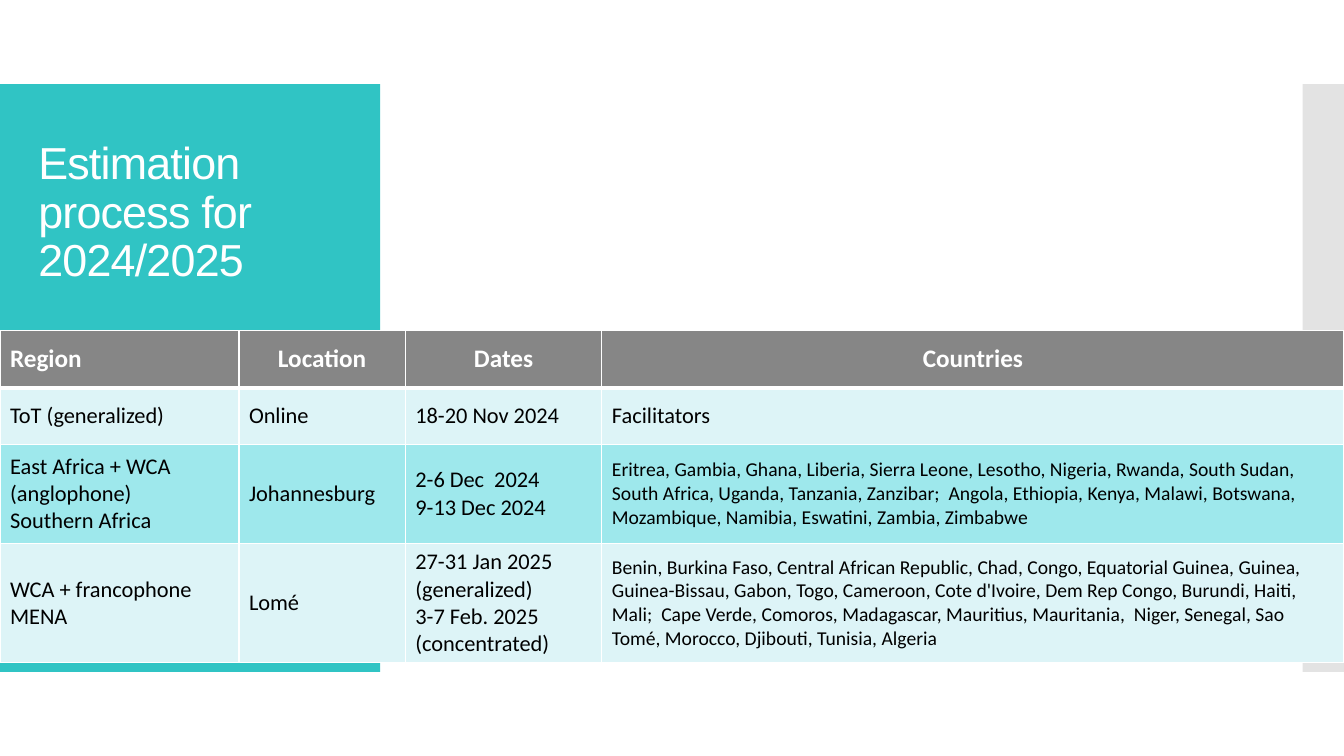
from lxml import etree
from pptx import Presentation
from pptx.dml.color import RGBColor
from pptx.enum.shapes import MSO_SHAPE
from pptx.enum.text import MSO_ANCHOR, MSO_AUTO_SIZE, PP_ALIGN
from pptx.oxml.ns import qn
from pptx.util import Inches, Pt

RECTANGLE = MSO_SHAPE.RECTANGLE
MIDDLE = MSO_ANCHOR.MIDDLE
NO_AUTOFIT = MSO_AUTO_SIZE.NONE
LEFT, CENTER = PP_ALIGN.LEFT, PP_ALIGN.CENTER

WIDTH, HEIGHT = 13.33, 7.5
PANEL_TOP, PANEL_HEIGHT = HEIGHT / 9, HEIGHT * 7 / 9
TITLE_PANEL = (0, PANEL_TOP, 3.77, PANEL_HEIGHT)
EDGE_PANEL = (12.92, PANEL_TOP, WIDTH - 12.92, PANEL_HEIGHT)
TITLE_BOX = (0.28, 1.23, 3.22, 1.78)
TABLE_BOX = (0, 3.28, WIDTH, 3.28)
COLUMNS = (2.37, 1.65, 1.95, 7.36)
ROWS = (0.57, 0.56, 0.98, 1.17)

COLORS = {
    "teal": "30C4C4",
    "edge": "C8C8C8",
    "header": "868686",
    "light": "DDF4F7",
    "strong": "9EE8EC",
    "white": "FFFFFF",
    "black": "000000",
}

SCHEDULE = (
    ("Region", "Location", "Dates", "Countries"),
    ("ToT (generalized)", "Online", "18-20 Nov 2024", "Facilitators"),
    (
        "East Africa + WCA (anglophone)\nSouthern Africa",
        "Johannesburg",
        "2-6 Dec  2024\n9-13 Dec 2024",
        "Eritrea, Gambia, Ghana, Liberia, Sierra Leone, Lesotho, Nigeria, Rwanda, "
        "South Sudan, South Africa, Uganda, Tanzania, Zanzibar;  Angola, Ethiopia, "
        "Kenya, Malawi, Botswana, Mozambique, Namibia, Eswatini, Zambia, Zimbabwe",
    ),
    (
        "WCA + francophone MENA",
        "Lomé",
        "27-31 Jan 2025 (generalized)\n3-7 Feb. 2025 (concentrated)",
        "Benin, Burkina Faso, Central African Republic, Chad, Congo, Equatorial Guinea, "
        "Guinea, Guinea-Bissau, Gabon, Togo, Cameroon, Cote d'Ivoire, Dem Rep Congo, "
        "Burundi, Haiti, Mali;  Cape Verde, Comoros, Madagascar, Mauritius, Mauritania,  "
        "Niger, Senegal, Sao Tomé, Morocco, Djibouti, Tunisia, Algeria",
    ),
)


def rgb(name):
    """Return the named colour."""
    return RGBColor.from_string(COLORS[name])


def format_font(font, color, **values):
    """Set a font's colour and its other format values."""
    font.color.rgb = rgb(color)
    for name, value in values.items():
        setattr(font, name, value)


def add_panel(page, box, color, opacity=100):
    """Place a plain panel behind everything already on the page."""
    panel = page.shapes.add_shape(RECTANGLE, *map(Inches, box))
    panel.shadow.inherit = False
    panel.fill.solid()
    panel.fill.fore_color.rgb = rgb(color)
    panel.line.fill.background()
    if opacity < 100:
        tone = panel._element.spPr.find(qn("a:solidFill"))[0]
        etree.SubElement(tone, qn("a:alpha"), val=str(opacity * 1000))
    page.shapes._spTree.insert(2, panel._element)


def place_title(page, box):
    """Move and format the title placeholder."""
    title = page.shapes.title
    for name, value in zip(("left", "top", "width", "height"), box):
        setattr(title, name, Inches(value))
    frame = title.text_frame
    frame.text = "Estimation process for 2024/2025"
    layout = {"word_wrap": True, "auto_size": NO_AUTOFIT, "vertical_anchor": MIDDLE}
    for name, value in layout.items():
        setattr(frame, name, value)
    para = frame.paragraphs[0]
    para.alignment = LEFT
    para.line_spacing = 0.9
    span = para.runs[0]
    format_font(span.font, "white", name="Arial", size=Pt(32))
    span.font._element.set("spc", "-60")


def add_borders(cell, bottom, top):
    """Draw white borders around a cell."""
    properties = cell._tc.get_or_add_tcPr()
    for side, points in (("L", 1), ("R", 1), ("T", top), ("B", bottom)):
        line = etree.SubElement(properties, qn(f"a:ln{side}"), w=str(Pt(points)))
        fill = etree.SubElement(line, qn("a:solidFill"))
        etree.SubElement(fill, qn("a:srgbClr"), val=COLORS["white"])


def fill_cell(cell, text, row, column):
    """Write and format one schedule cell."""
    is_header = row == 0
    add_borders(cell, bottom=3 if is_header else 1, top=3 if row == 1 else 1)
    cell.fill.solid()
    cell.fill.fore_color.rgb = rgb(("header", "light", "strong", "light")[row])
    cell.vertical_anchor = MIDDLE
    cell.text = text
    is_country_list = row > 1 and column == 3
    size = 18 if is_header else 14 if is_country_list else 16
    for para in cell.text_frame.paragraphs:
        para.alignment = CENTER if is_header and column else LEFT
        for span in para.runs:
            format_font(
                span.font,
                "white" if is_header else "black",
                name="Calibri",
                size=Pt(size),
                bold=is_header,
            )


def add_schedule(page, box):
    """Add the schedule table in its box."""
    frame = page.shapes.add_table(len(ROWS), len(COLUMNS), *map(Inches, box))
    table = frame.table
    table.horz_banding = False
    for column, width in zip(table.columns, COLUMNS):
        column.width = Inches(width)
    for row, height in zip(table.rows, ROWS):
        row.height = Inches(height)
    for row, texts in enumerate(SCHEDULE):
        for column, text in enumerate(texts):
            fill_cell(table.cell(row, column), text, row, column)


def build_process_slide(deck):
    """Build the estimation process slide."""
    page = deck.slides.add_slide(deck.slide_layouts[5])
    add_panel(page, EDGE_PANEL, "edge", opacity=50)
    add_panel(page, TITLE_PANEL, "teal")
    place_title(page, TITLE_BOX)
    add_schedule(page, TABLE_BOX)


def main():
    """Create and save the deck."""
    deck = Presentation()
    deck.slide_width, deck.slide_height = Inches(WIDTH), Inches(HEIGHT)
    build_process_slide(deck)
    deck.save("out.pptx")


if __name__ == "__main__":
    main()
